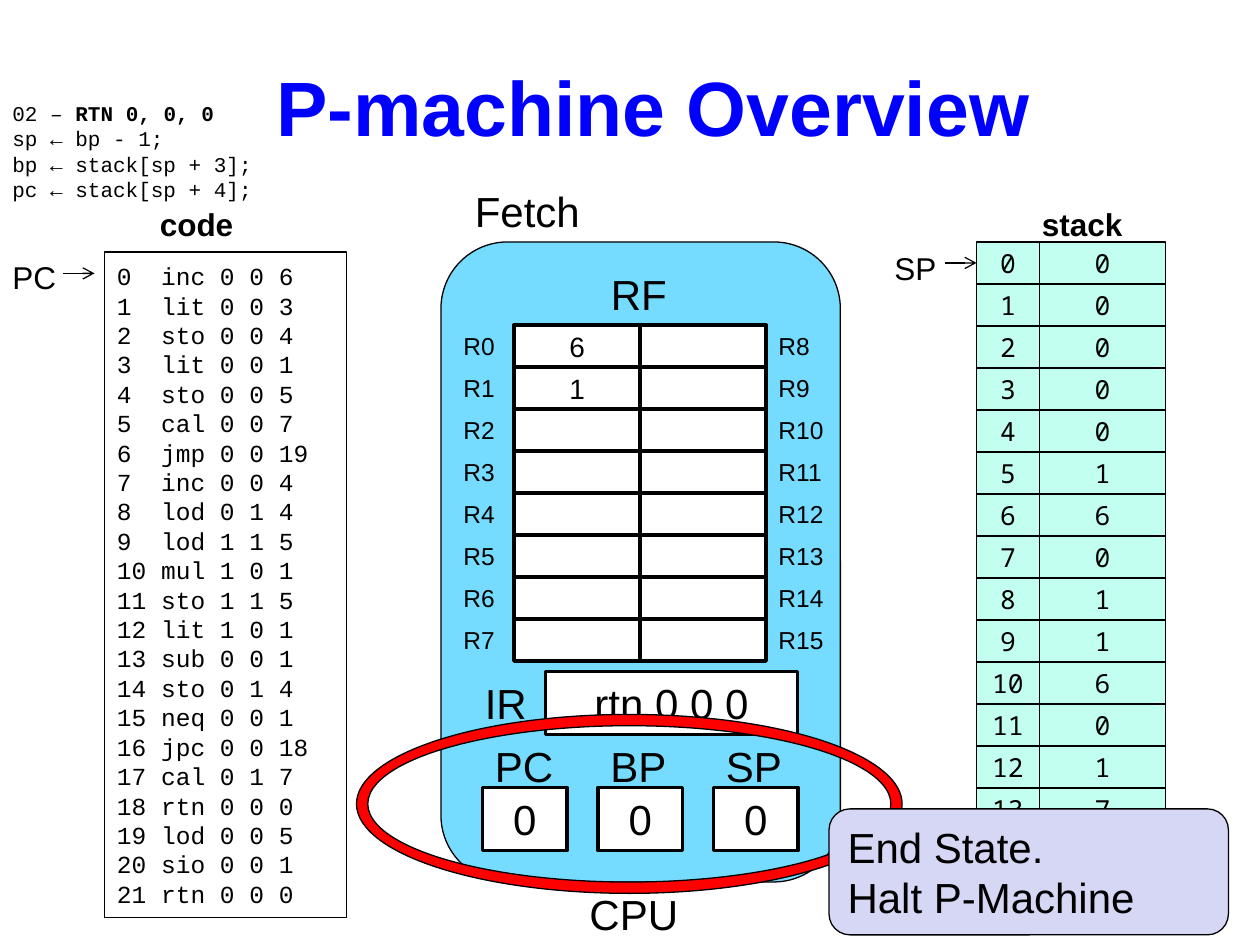
from pptx import Presentation, util as u
from pptx.dml.color import RGBColor
from pptx.enum import shapes, text
from pptx.oxml.ns import qn
from lxml import etree

KIND = shapes.MSO_SHAPE
LEFT, CENTER = text.PP_ALIGN.LEFT, text.PP_ALIGN.CENTER
PITCH = 1 / 3

deck = Presentation()
deck.slide_width, deck.slide_height = u.Inches(10), u.Inches(7.5)
page = deck.slides.add_slide(deck.slide_layouts[6])


def color(value):
    return RGBColor.from_string(value)


def add_box(at, lines=(), size=24, font="Arial", kind=None, fill=None, line=0.75,
            align=LEFT, bold=False, ink="000000", wrap=True, fit=False):
    place = [u.Inches(value) for value in at]
    if kind is None:
        box = page.shapes.add_textbox(*place)
    else:
        box = page.shapes.add_shape(kind, *place)
        box.shadow.inherit = False
        box.line.color.rgb = color("000000")
        box.line.width = u.Pt(line)
        if fill:
            box.fill.solid()
            box.fill.fore_color.rgb = color(fill)
        else:
            box.fill.background()
    frame = box.text_frame
    frame.word_wrap = wrap
    if kind is None or fit:
        frame.auto_size = text.MSO_AUTO_SIZE.SHAPE_TO_FIT_TEXT
    frame.text = "\n".join(lines)
    for para in frame.paragraphs:
        para.alignment = align
        para.font.size, para.font.name, para.font.bold = u.Pt(size), font, bold
        para.font.color.rgb = color(ink)
    return box


add_box((1.95, 0.42, 6.47, 0.84), ["P-machine Overview"], 44, align=CENTER,
        bold=True, ink="0000FF", wrap=False)

add_box((3.5, 1.92, 3.17, 5.08), kind=KIND.ROUNDED_RECTANGLE, fill="75DBFF")
add_box((4.33, 5.33, 2, 0.5), ["rtn 0 0 0"], kind=KIND.RECTANGLE, fill="FFFFFF",
        line=2, align=CENTER)
for index, name in enumerate(["PC", "BP", "SP"]):
    offset = index * 11 / 12
    add_box((3.83 + offset, 6.25, 0.67, 0.5), ["0"], kind=KIND.RECTANGLE,
            fill="FFFFFF", line=2, align=CENTER)
    add_box((3.83 + offset, 5.83, 0.83, 0.5), [name])
add_box((3.75, 5.33, 0.83, 0.5), ["IR"])
add_box((4.58, 7, 0.92, 0.5), ["CPU"])
add_box((4.75, 2.08, 0.83, 0.5), ["RF"])

code = [
    "0  inc 0 0 6", "1  lit 0 0 3", "2  sto 0 0 4", "3  lit 0 0 1",
    "4  sto 0 0 5", "5  cal 0 0 7", "6  jmp 0 0 19", "7  inc 0 0 4",
    "8  lod 0 1 4", "9  lod 1 1 5", "10 mul 1 0 1", "11 sto 1 1 5",
    "12 lit 1 0 1", "13 sub 0 0 1", "14 sto 0 1 4", "15 neq 0 0 1",
    "16 jpc 0 0 18", "17 cal 0 1 7", "18 rtn 0 0 0", "19 lod 0 0 5",
    "20 sio 0 0 1", "21 rtn 0 0 0",
]
add_box((0.83, 2, 1.92, 5.28), code, 14, "Courier New", KIND.RECTANGLE, fit=True)
add_box((1.17, 1.58, 0.79, 0.41), ["code"], 18, bold=True, wrap=False)
add_box((8.17, 1.58, 0.84, 0.41), ["stack"], 18, bold=True, wrap=False)

registers = ["6", "1"] + [""] * 14
for number, value in enumerate(registers):
    column, row = divmod(number, 8)
    top = 2.58 + row * PITCH
    add_box((4.08 + column, top, 1, PITCH), [value] if value else [], 16,
            kind=KIND.RECTANGLE, fill="FFFFFF", line=2, align=CENTER)
    add_box((6.08 if column else 3.58, top, 0.58 if number > 9 else 0.5, 0.34),
            [f"R{number}"], 14)

stack_cells = []
for address, value in enumerate([0, 0, 0, 0, 0, 1, 6, 0, 1, 1, 6, 0, 1, 7]):
    for left, width, label in [(8.25, 1, value), (7.75, 0.5, address)]:
        stack_cells.append(add_box(
            (left, 1.92 + address * PITCH, width, PITCH), [str(label)], 15,
            "Noto Sans Mono", KIND.RECTANGLE, "C2FFF0", align=CENTER))

add_box((7, 1.93, 0.67, 0.4), ["SP"], 18)
add_box((0, 2, 0.67, 0.4), ["PC"], 18)
pointers = []
for left, top in [(7.5, 1.92 + PITCH / 2), (0.5, 2.17)]:
    arrow = page.shapes.add_connector(
        shapes.MSO_CONNECTOR.STRAIGHT, u.Inches(left), u.Inches(top),
        u.Inches(left + 0.25), u.Inches(top))
    arrow.line.color.rgb = color("000000")
    arrow.line.width = u.Pt(0.75)
    etree.SubElement(arrow.line._get_or_add_ln(), qn("a:tailEnd"), type="arrow")
    etree.SubElement(arrow._element.spPr, qn("a:effectLst"))
    pointers.append(arrow)
pointers[0].end_connect(stack_cells[1], 1)

steps = add_box((0, 0.75, 2.42, 0.91),
                ["02 – ", "sp ← bp - 1;", "bp ← stack[sp + 3];", "pc ← stack[sp + 4];"],
                12, "Courier New")
span = steps.text_frame.paragraphs[0].add_run()
span.text = "RTN 0, 0, 0"
span.font.bold = True

add_box((3.67, 1.42, 3.08, 0.5), ["Fetch"])
ring = add_box((2.83, 5.67, 4.33, 1.42), kind=KIND.DONUT, fill="FF0000")
ring.adjustments[0] = 0.063
add_box((6.58, 6.42, 3.17, 1), ["End State.", "Halt P-Machine"],
        kind=KIND.ROUNDED_RECTANGLE, fill="D6D6F5")

deck.save("out.pptx")
